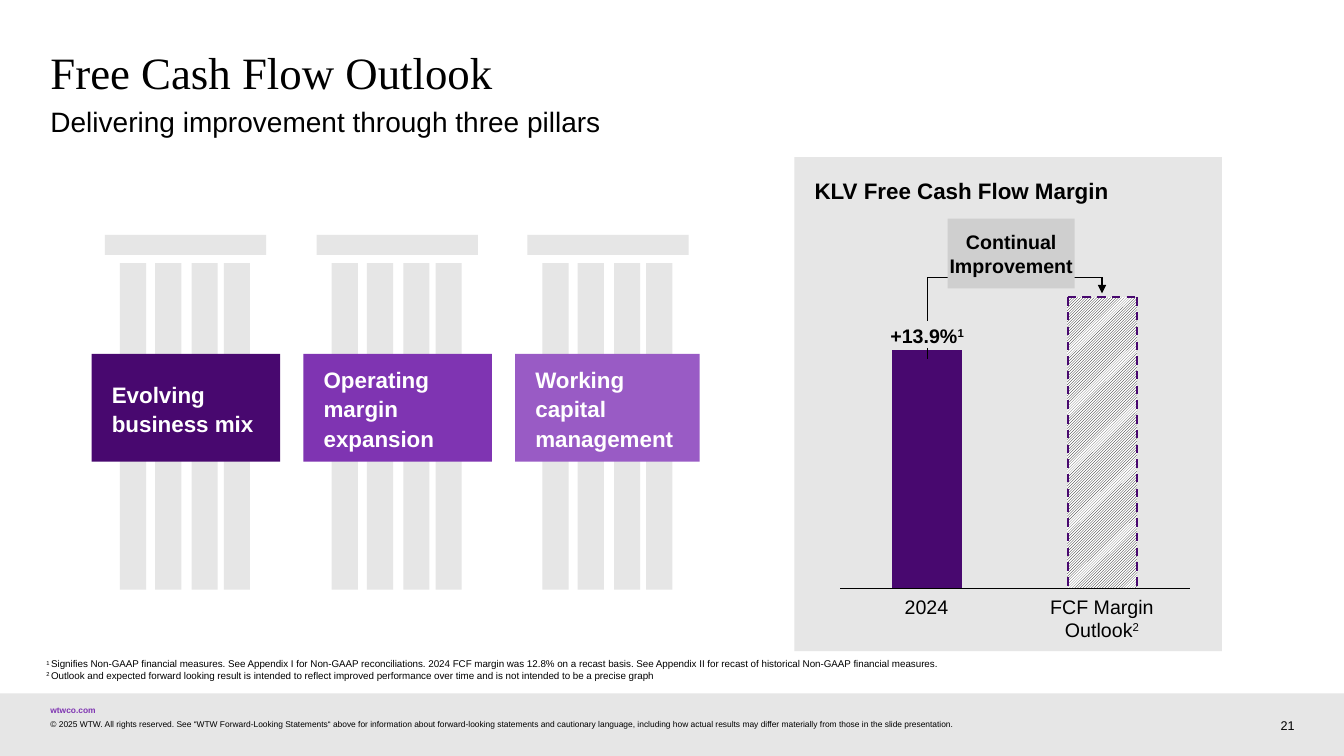
from dataclasses import dataclass

from lxml.etree import SubElement
from pptx import Presentation
from pptx.chart.data import CategoryChartData
from pptx.dml.color import RGBColor
from pptx.enum.chart import XL_CHART_TYPE, XL_TICK_LABEL_POSITION, XL_TICK_MARK
from pptx.enum.dml import MSO_LINE, MSO_PATTERN
from pptx.enum.shapes import MSO_CONNECTOR, MSO_SHAPE
from pptx.enum.text import MSO_ANCHOR, MSO_AUTO_SIZE, PP_ALIGN
from pptx.oxml import parse_xml
from pptx.oxml.ns import nsdecls, qn
from pptx.util import Inches, Pt

COLORS = {
    "black": "000000", "white": "FFFFFF", "panel": "E6E6E6", "callout": "CFCFCF",
    "deep": "48086F", "violet": "7F34B2", "lilac": "995BC5", "link": "7F35B2",
}


@dataclass(frozen=True)
class Area:
    left: float
    top: float
    width: float
    height: float

    def lengths(self) -> tuple:
        return tuple(Inches(v) for v in (self.left, self.top, self.width, self.height))


@dataclass(frozen=True)
class Span:
    text: str
    raised: bool = False


@dataclass(frozen=True)
class Style:
    size: float
    color: str = "black"
    bold: bool = False
    font: str = "Arial"
    align: PP_ALIGN = PP_ALIGN.LEFT
    anchor: MSO_ANCHOR = MSO_ANCHOR.TOP
    insets: tuple = (0, 0, 0, 0)
    wrap: bool = True
    line_spacing: float = 1.0


@dataclass(frozen=True)
class Pillar:
    left: float
    banner: Area
    color: str
    label: str


@dataclass(frozen=True)
class Stroke:
    start: tuple
    end: tuple
    width: float = 1
    color: str = "black"
    dashed: bool = False
    arrow: bool = False


@dataclass(frozen=True)
class Label:
    area: Area
    lines: list
    style: Style


BANNER = Style(16, "white", True, anchor=MSO_ANCHOR.MIDDLE, insets=(0.2, 0, 0.2, 0),
               line_spacing=1.1)
CATEGORY = Style(14, align=PP_ALIGN.CENTER)

PILLARS = [
    Pillar(1.19, Area(0.91, 3.51, 1.87, 1.07), "deep", "Evolving business mix"),
    Pillar(3.29, Area(3.01, 3.51, 1.87, 1.07), "violet", "Operating \vmargin expansion"),
    Pillar(5.38, Area(5.11, 3.51, 1.83, 1.07), "lilac", "Working capital management"),
]
COLUMN_OFFSETS = (0, 0.35, 0.71, 1.03)

STROKES = [
    Stroke((10.59, 2.95), (11.28, 2.95), 1.5, "deep", dashed=True),
    Stroke((10.59, 2.95), (10.59, 5.84), 1.5, "deep", dashed=True),
    Stroke((11.28, 2.95), (11.28, 5.84), 1.5, "deep", dashed=True),
    Stroke((9.2, 3.18), (9.2, 2.75)),
    Stroke((9.2, 2.75), (10.93, 2.75)),
    Stroke((10.93, 2.75), (10.93, 2.91), arrow=True),
    Stroke((9.2, 3.45), (9.2, 3.56), 0.5),
]

FOOTER_LABELS = [
    Label(Area(0.5, 7, 0.45, 0.1), [[Span("wtwco.com")]],
          Style(6, "link", True, wrap=False)),
    Label(Area(12.5, 7.04, 0.34, 0.23), [[Span("21")]],
          Style(9, align=PP_ALIGN.RIGHT, anchor=MSO_ANCHOR.BOTTOM)),
    Label(Area(0.46, 6.43, 9.95, 0.57), [
        [Span("1 ", True), Span(
            "Signifies Non-GAAP financial measures. See Appendix I for Non-GAAP "
            "reconciliations. 2024 FCF margin was 12.8% on a recast basis. See Appendix II "
            "for recast of historical Non-GAAP financial measures.")],
        [Span("2 ", True), Span(
            "Outlook and expected forward looking result is intended to reflect improved "
            "performance over time and is not intended to be a precise graph")],
    ], Style(7, insets=(0, 0.1, 0, 0))),
    Label(Area(0.5, 7.13, 10, 0.16), [[Span(
        "© 2025 WTW. All rights reserved. See “WTW Forward-Looking Statements“ above for "
        "information about forward-looking statements and cautionary language, including how "
        "actual results may differ materially from those in the slide presentation.")]],
          Style(6)),
]
CHART_LABELS = [
    Label(Area(8.97, 5.9, 0.44, 0.23), [[Span("2024")]], CATEGORY),
    Label(Area(10.41, 5.9, 1.04, 0.47), [[Span("FCF Margin Outlook"), Span("2", True)]],
          CATEGORY),
    Label(Area(8.8, 3.22, 0.79, 0.23), [[Span("+13.9%"), Span("1", True)]],
          Style(14, bold=True, align=PP_ALIGN.CENTER, anchor=MSO_ANCHOR.BOTTOM,
                insets=(0.03, 0, 0.03, 0), wrap=False)),
]


def rgb(name: str) -> RGBColor:
    return RGBColor.from_string(COLORS[name])


def write(box, lines: list, style: Style) -> None:
    frame = box.text_frame
    frame.auto_size = MSO_AUTO_SIZE.NONE
    frame.word_wrap = style.wrap
    frame.vertical_anchor = style.anchor
    (frame.margin_left, frame.margin_top,
     frame.margin_right, frame.margin_bottom) = (Inches(v) for v in style.insets)
    for number, spans in enumerate(lines):
        para = frame.add_paragraph() if number else frame.paragraphs[0]
        para.alignment = style.align
        para.line_spacing = style.line_spacing
        para.space_before = Pt(0)
        if box.is_placeholder:
            properties = para._p.get_or_add_pPr()
            properties.set("marL", "0")
            properties.set("indent", "0")
            SubElement(properties, qn("a:buNone"))
        font = para.font
        font.name, font.size, font.bold = style.font, Pt(style.size), style.bold
        font.color.rgb = rgb(style.color)
        for span in spans:
            run = para.add_run()
            if "\v" in span.text:
                first, rest = span.text.split("\v")
                run.text = first
                para.add_line_break()
                run = para.add_run()
                run.text = rest
            else:
                run.text = span.text
            if span.raised:
                run._r.get_or_add_rPr().set("baseline", "30000")


def add_block(page, area: Area, color: str, kind: MSO_SHAPE = MSO_SHAPE.RECTANGLE):
    block = page.shapes.add_shape(kind, *area.lengths())
    block.shadow.inherit = False
    block.fill.solid()
    block.fill.fore_color.rgb = rgb(color)
    block.line.fill.background()
    return block


def add_label(page, label: Label) -> None:
    write(page.shapes.add_textbox(*label.area.lengths()), label.lines, label.style)


def fill_placeholder(box, area: Area, text: str, style: Style) -> None:
    box.left, box.top, box.width, box.height = area.lengths()
    write(box, [[Span(text)]], style)


def add_pillar(page, pillar: Pillar) -> None:
    for offset in COLUMN_OFFSETS:
        add_block(page, Area(pillar.left + offset, 2.61, 0.26, 3.24), "panel")
    add_block(page, Area(pillar.left - 0.15, 2.33, 1.6, 0.2), "panel")
    banner = add_block(page, pillar.banner, pillar.color, MSO_SHAPE.PENTAGON)
    banner.adjustments[0] = 0
    write(banner, [[Span(pillar.label)]], BANNER)


def add_stroke(page, stroke: Stroke) -> None:
    ends = (Inches(v) for v in stroke.start + stroke.end)
    connector = page.shapes.add_connector(MSO_CONNECTOR.STRAIGHT, *ends)
    connector.line.width = Pt(stroke.width)
    connector.line.color.rgb = rgb(stroke.color)
    if stroke.dashed:
        connector.line.dash_style = MSO_LINE.DASH
    if stroke.arrow:
        SubElement(connector.line._get_or_add_ln(), qn("a:tailEnd"), type="triangle")
    SubElement(connector._element.spPr, qn("a:effectLst"))


def add_margin_chart(page) -> None:
    data = CategoryChartData()
    data.categories = ["1", "2"]
    data.add_series("Series 1", (82, 100))
    chart = page.shapes.add_chart(XL_CHART_TYPE.COLUMN_STACKED,
                                  *Area(8.24, 2.86, 3.65, 3.07).lengths(), data).chart
    chart.has_legend = chart.has_title = False
    chart.font.name, chart.font.size = "Arial", Pt(10)
    chart.font.color.rgb = rgb("black")
    values, categories = chart.value_axis, chart.category_axis
    values.minimum_scale, values.maximum_scale = 0, 100
    values.has_major_gridlines = values.visible = False
    categories.tick_label_position = XL_TICK_LABEL_POSITION.NONE
    categories.major_tick_mark = XL_TICK_MARK.NONE
    categories.format.line.color.rgb = rgb("black")
    categories.format.line.width = Pt(0.75)
    plot = chart.plots[0]
    plot.gap_width, plot.overlap, plot.vary_by_categories = 150, 100, False
    series = plot.series[0]
    series.format.fill.solid()
    series.format.fill.fore_color.rgb = rgb("deep")
    outlook = series.points[1].format.fill
    outlook.patterned()
    outlook.pattern = MSO_PATTERN.LIGHT_UPWARD_DIAGONAL
    outlook.fore_color.rgb, outlook.back_color.rgb = rgb("black"), rgb("white")
    area = chart._chartSpace.chart.plotArea
    for layout in area.findall(qn("c:layout")):
        area.remove(layout)
    area.insert(0, parse_xml(
        f'<c:layout {nsdecls("c")}><c:manualLayout><c:layoutTarget val="inner"/>'
        '<c:xMode val="edge"/><c:yMode val="edge"/><c:x val="0.025"/><c:y val="0.03"/>'
        '<c:w val="0.95"/><c:h val="0.94"/></c:manualLayout></c:layout>'))


def main() -> None:
    deck = Presentation()
    deck.slide_width, deck.slide_height = Inches(13.33), Inches(7.5)
    page = deck.slides.add_slide(deck.slide_layouts[1])
    fill_placeholder(page.shapes.title, Area(0.5, 0.5, 12.3, 0.5), "Free Cash Flow Outlook",
                     Style(32, font="Times New Roman", line_spacing=0.9))
    fill_placeholder(page.placeholders[1], Area(0.5, 1.04, 12.3, 0.4),
                     "Delivering improvement through three pillars", Style(20))
    add_block(page, Area(0, 6.88, 13.33, 0.62), "panel")
    for pillar in PILLARS:
        add_pillar(page, pillar)
    for label in FOOTER_LABELS:
        add_label(page, label)
    panel = add_block(page, Area(7.88, 1.56, 4.24, 4.9), "panel")
    write(panel, [[Span("KLV Free Cash Flow Margin")]],
          Style(16, bold=True, insets=(0.2, 0.2, 0.2, 0)))
    add_margin_chart(page)
    for stroke in STROKES:
        add_stroke(page, stroke)
    for label in CHART_LABELS:
        add_label(page, label)
    callout = add_block(page, Area(9.4, 2.17, 1.26, 0.69), "callout")
    write(callout, [[Span("Continual Improvement")]],
          Style(14, bold=True, align=PP_ALIGN.CENTER, anchor=MSO_ANCHOR.MIDDLE))
    deck.save("out.pptx")


if __name__ == "__main__":
    main()
